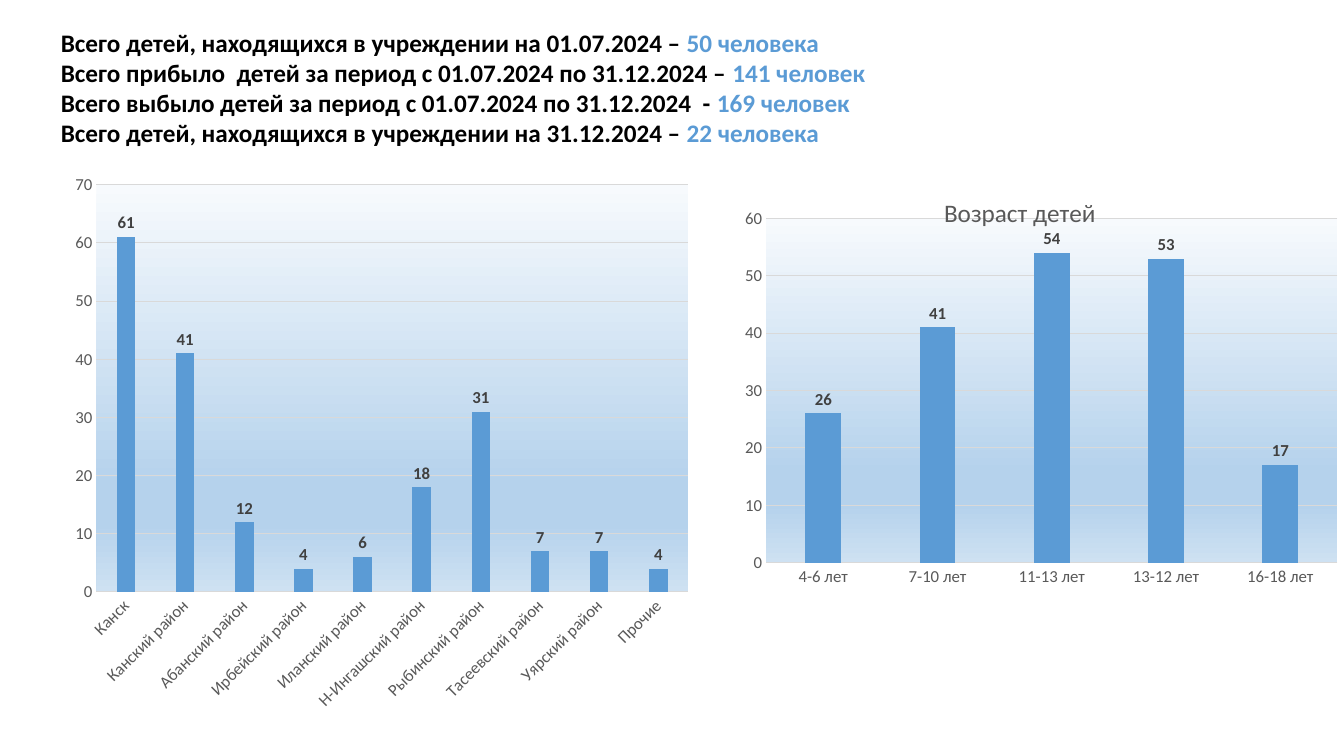
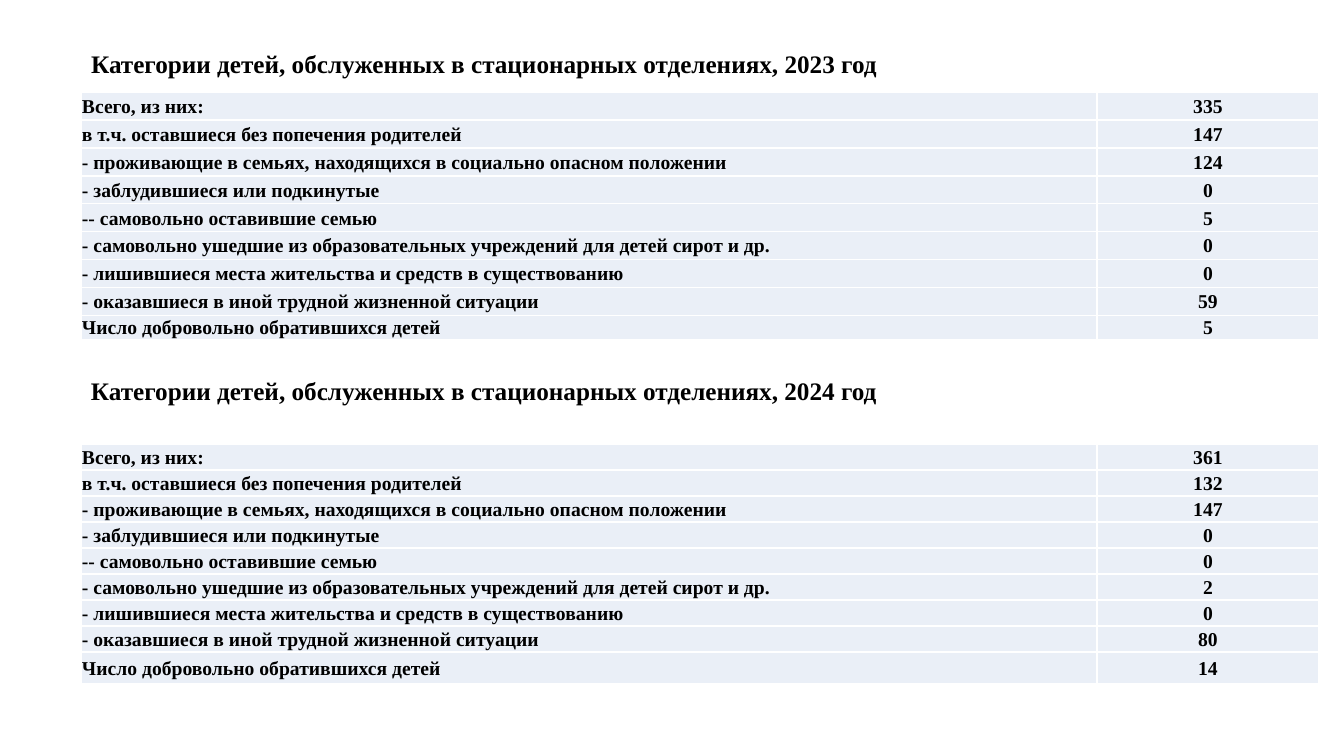
from lxml.etree import SubElement
from pptx import Presentation
from pptx.chart.data import CategoryChartData
from pptx.dml.color import RGBColor
from pptx.enum.chart import XL_CHART_TYPE, XL_LABEL_POSITION, XL_TICK_MARK
from pptx.enum.text import MSO_ANCHOR, MSO_AUTO_SIZE, PP_ALIGN
from pptx.oxml.ns import qn
from pptx.util import Emu, Pt

PX_PER_INCH = 100.8
PAGE_WIDTH, PAGE_HEIGHT = 1344, 756

SANS, SERIF = "Calibri", "Times New Roman"
BLACK, WHITE, BLUE = "000000", "FFFFFF", "5B9BD5"
AXIS_GRAY, LABEL_GRAY, GRID_GRAY = "595959", "404040", "D9D9D9"
CELL_BLUE = "EAEFF7"
PLOT_GRADIENT = [(0, "F7FAFD"), (74, "B5D2EC"), (83, "B5D2EC"), (100, "CEE1F2")]

SUMMARY = [
    ("Всего детей, находящихся в учреждении на 01.07.2024 – ", "50 человека"),
    ("Всего прибыло  детей за период с 01.07.2024 по 31.12.2024 – ", "141 человек"),
    ("Всего выбыло детей за период с 01.07.2024 по 31.12.2024  - ", "169 человек"),
    ("Всего детей, находящихся в учреждении на 31.12.2024 – ", "22 человека"),
]
DISTRICTS = {
    "Канск": 61, "Канский район": 41, "Абанский район": 12, "Ирбейский район": 4,
    "Иланский район": 6, "Н-Ингашский район": 18, "Рыбинский район": 31,
    "Тасеевский район": 7, "Уярский район": 7, "Прочие": 4,
}
AGES = {"4-6 лет": 26, "7-10 лет": 41, "11-13 лет": 54, "13-12 лет": 53, "16-18 лет": 17}
CATEGORIES = [
    "Всего, из них:",
    "в т.ч. оставшиеся без попечения родителей",
    "- проживающие в семьях, находящихся в социально опасном положении",
    "- заблудившиеся или подкинутые",
    "-- самовольно оставившие семью",
    "- самовольно ушедшие из образовательных учреждений для детей сирот и др.",
    "- лишившиеся места жительства и средств в существованию",
    "- оказавшиеся в иной трудной жизненной ситуации",
    "Число добровольно обратившихся детей",
]
COUNTS_2023 = [335, 147, 124, 0, 5, 0, 0, 59, 5]
COUNTS_2024 = [361, 132, 147, 0, 0, 2, 0, 80, 14]


def px(length):
    return Emu(round(length * 914400 / PX_PER_INCH))


def color(value):
    return RGBColor.from_string(value)


def style_font(font, name, size, fill, bold=False):
    font.name, font.size, font.bold = name, Pt(size), bold
    font.color.rgb = color(fill)


def add_gradient(parent, stops):
    """Append a vertical gradient; stops are (percent, colour) pairs."""
    gradient = SubElement(parent, qn("a:gradFill"), rotWithShape="1")
    stop_list = SubElement(gradient, qn("a:gsLst"))
    for percent, fill in stops:
        stop = SubElement(stop_list, qn("a:gs"), pos=str(percent * 1000))
        SubElement(stop, qn("a:srgbClr"), val=fill)
    SubElement(gradient, qn("a:lin"), ang="5400000", scaled="0")


def set_layout(parent, index, **values):
    """Fix a chart part at fractions of the chart, as child number index."""
    for old in parent.findall(qn("c:layout")):
        parent.remove(old)
    layout = parent.makeelement(qn("c:layout"))
    parent.insert(index, layout)
    manual = SubElement(layout, qn("c:manualLayout"))
    if "w" in values:
        SubElement(manual, qn("c:layoutTarget"), val="inner")
    for axis in ("x", "y"):
        SubElement(manual, qn(f"c:{axis}Mode"), val="edge")
    for key, value in values.items():
        SubElement(manual, qn(f"c:{key}"), val=str(value))


def style_axes(chart, maximum, label_angle):
    categories, values = chart.category_axis, chart.value_axis
    for axis in (categories, values):
        axis.major_tick_mark = axis.minor_tick_mark = XL_TICK_MARK.NONE
        style_font(axis.tick_labels.font, SANS, 12, AXIS_GRAY)
    categories.has_major_gridlines = False
    body = categories._element.find(qn("c:txPr")).find(qn("a:bodyPr"))
    body.set("rot", str(label_angle * 60000))
    values.minimum_scale, values.maximum_scale, values.major_unit = 0, maximum, 10
    values.has_major_gridlines = True
    values.format.line.fill.background()
    for line in (categories.format.line, values.major_gridlines.format.line):
        line.color.rgb = color(GRID_GRAY)
        line.width = Pt(0.75)


def add_column_chart(page, box, counts, plot_box, maximum, label_angle=0, title=None):
    data = CategoryChartData()
    data.categories = list(counts)
    data.add_series("Series 1", list(counts.values()))
    chart = page.shapes.add_chart(
        XL_CHART_TYPE.COLUMN_CLUSTERED, *map(px, box), data).chart
    style_font(chart.font, SANS, 10, BLACK)
    chart.has_legend = False
    chart.has_title = title is not None
    if title:
        frame = chart.chart_title.text_frame
        frame.text = title
        style_font(frame.paragraphs[0].runs[0].font, SANS, 18, AXIS_GRAY)
        set_layout(chart.chart_title._element, 1, x=0.37, y=0.05)
    style_axes(chart, maximum, label_angle)

    plot = chart.plots[0]
    plot.gap_width, plot.overlap, plot.vary_by_categories = 219, -27, False
    fill = plot.series[0].format.fill
    fill.solid()
    fill.fore_color.rgb = color(BLUE)
    plot.has_data_labels = True
    labels = plot.data_labels
    labels.show_value = True
    labels.position = XL_LABEL_POSITION.OUTSIDE_END
    style_font(labels.font, SANS, 12, LABEL_GRAY, bold=True)

    plot_area = chart._chartSpace.find(".//" + qn("c:plotArea"))
    set_layout(plot_area, 0, **dict(zip("xywh", plot_box)))
    add_gradient(SubElement(plot_area, qn("c:spPr")), PLOT_GRADIENT)


def add_summary(page, box):
    frame = page.shapes.add_textbox(*map(px, box)).text_frame
    frame.word_wrap = True
    for index, parts in enumerate(SUMMARY):
        para = frame.add_paragraph() if index else frame.paragraphs[0]
        for text, fill in zip(parts, (BLACK, BLUE)):
            span = para.add_run()
            span.text = text
            style_font(span.font, SANS, 18, fill, bold=True)


def format_heading(shape, box, year):
    shape.left, shape.top, shape.width, shape.height = map(px, box)
    frame = shape.text_frame
    frame.text = f"Категории детей, обслуженных в стационарных отделениях, {year} год"
    frame.word_wrap, frame.auto_size = True, MSO_AUTO_SIZE.NONE
    frame.vertical_anchor = MSO_ANCHOR.MIDDLE
    para = frame.paragraphs[0]
    para.alignment, para.line_spacing = PP_ALIGN.LEFT, 0.9
    style_font(para.runs[0].font, SERIF, 18, BLACK, bold=True)


def format_cell(cell, text, alignment):
    cell.text = text
    cell.vertical_anchor = MSO_ANCHOR.MIDDLE
    cell.margin_left = cell.margin_right = cell.margin_top = px(1)
    cell.margin_bottom = 0
    para = cell.text_frame.paragraphs[0]
    para.alignment = alignment
    style_font(para.runs[0].font, SERIF, 14, BLACK, bold=True)
    properties = cell._tc.get_or_add_tcPr()
    for side in ("lnL", "lnR", "lnT", "lnB"):
        line = SubElement(properties, qn(f"a:{side}"), w=str(Pt(1)))
        SubElement(SubElement(line, qn("a:solidFill")), qn("a:srgbClr"), val=WHITE)
    cell.fill.solid()
    cell.fill.fore_color.rgb = color(CELL_BLUE)


def add_category_table(page, box, counts, row_height):
    """Rows share one height; the last takes what is left of the box."""
    left, top, width, height = box
    count_width = 222
    table = page.shapes.add_table(len(counts), 2, *map(px, box)).table
    table.first_row = table.horz_banding = False
    table.columns[0].width = px(width - count_width)
    table.columns[1].width = px(count_width)
    for index, (category, count) in enumerate(zip(CATEGORIES, counts)):
        table.rows[index].height = px(row_height)
        format_cell(table.cell(index, 0), category, PP_ALIGN.LEFT)
        format_cell(table.cell(index, 1), str(count), PP_ALIGN.CENTER)
    table.rows[len(counts) - 1].height = px(height - row_height * (len(counts) - 1))


def build_movement_page(deck):
    page = deck.slides.add_slide(deck.slide_layouts[6])
    add_column_chart(page, (51, 168, 650, 558), DISTRICTS,
                     (0.07, 0.03, 0.91, 0.73), 70, label_angle=-45)
    add_column_chart(page, (702, 168, 642, 459), AGES,
                     (0.1, 0.11, 0.89, 0.75), 60, title="Возраст детей")
    add_summary(page, (51, 22, 1223, 163))


def build_category_page(deck):
    page = deck.slides.add_slide(deck.slide_layouts[5])
    format_heading(page.shapes.title, (81, 40, 1159, 51), 2023)
    add_category_table(page, (81, 92, 1238, 248), COUNTS_2023, 28)
    heading = page.shapes.add_textbox(0, 0, 0, 0)
    format_heading(heading, (81, 367, 1159, 51), 2024)
    add_category_table(page, (81, 444, 1238, 240), COUNTS_2024, 26)


def main():
    deck = Presentation()
    deck.slide_width, deck.slide_height = px(PAGE_WIDTH), px(PAGE_HEIGHT)
    build_movement_page(deck)
    build_category_page(deck)
    deck.save("out.pptx")


if __name__ == "__main__":
    main()
